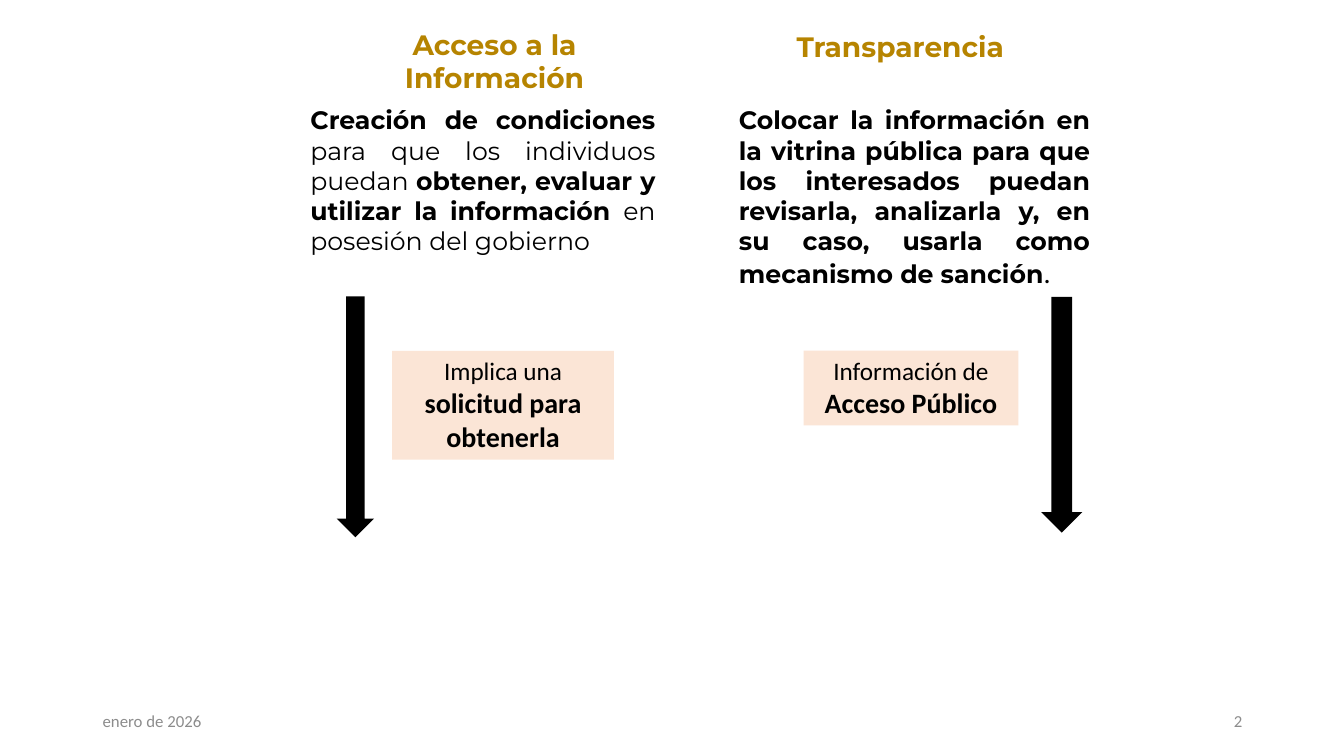
import pptx
import pptx.util
import pptx.dml.color
import pptx.enum.shapes
import pptx.enum.text

COLORS = {"gold": "B68400", "black": "000000", "peach": "FBE5D6", "gray": "8C8C8C"}
ALIGN = pptx.enum.text.PP_ALIGN
ANCHOR = pptx.enum.text.MSO_ANCHOR
SHAPES = pptx.enum.shapes.MSO_SHAPE

STYLES = {
    "heading": ("Montserrat", 20, True, "gold"),
    "plain": ("Montserrat", 18, False, "black"),
    "strong": ("Montserrat", 18, True, "black"),
    "stop": ("Calibri", 20, False, "black"),
    "note": ("Calibri", 18, False, "black"),
    "key": ("Calibri", 20, True, "black"),
    "footer": ("Calibri", 12, False, "gray"),
}

TEXTS = [
    ((3.37, 0.22, 3.07, 0.77), ALIGN.CENTER, None, [("Acceso a la Información", "heading")]),
    ((2.98, 0.99, 3.62, 1.62), ALIGN.JUSTIFY, None, [
        ("Creación de condiciones ", "strong"),
        ("para que los individuos puedan ", "plain"),
        ("obtener, evaluar y utilizar la información ", "strong"),
        ("en posesión del gobierno", "plain"),
    ]),
    ((3.89, 3.48, 2.2, 1.08), ALIGN.CENTER, "peach", [
        ("Implica una ", "note"), ("solicitud para obtenerla", "key"),
    ]),
    ((7.76, 0.24, 2.34, 0.44), ALIGN.CENTER, None, [("Transparencia", "heading")]),
    ((7.23, 0.99, 3.68, 1.95), ALIGN.JUSTIFY, None, [
        ("Colocar la información en la vitrina pública para que los interesados puedan "
         "revisarla, analizarla y, en su caso, usarla como mecanismo de sanción", "strong"),
        (".", "stop"),
    ]),
    ((7.97, 3.48, 2.13, 0.74), ALIGN.CENTER, "peach", [
        ("Información de ", "note"), ("Acceso Público", "key"),
    ]),
]
FOOTERS = [
    ((0.92, 6.95, 3, 0.4), ALIGN.LEFT, None, [("enero de 2026", "footer")]),
    ((9.42, 6.95, 3, 0.4), ALIGN.RIGHT, None, [("2", "footer")]),
]
ARROWS = [(2.33, 3.95, 2.39, 0.37), (9.36, 3.91, 2.34, 0.41)]


def inches(place):
    return [pptx.util.Inches(length) for length in place]


def color(name):
    return pptx.dml.color.RGBColor.from_string(COLORS[name])


def add_solid(page, kind, place, fill):
    shape = page.shapes.add_shape(kind, *inches(place))
    shape.shadow.inherit = False
    shape.fill.solid()
    shape.fill.fore_color.rgb = color(fill)
    shape.line.fill.background()
    return shape


def add_text(page, place, align, fill, spans, anchor):
    if fill:
        box = add_solid(page, SHAPES.RECTANGLE, place, fill)
    else:
        box = page.shapes.add_textbox(*inches(place))
    frame = box.text_frame
    frame.word_wrap = True
    frame.vertical_anchor = anchor
    para = frame.paragraphs[0]
    para.alignment = align
    for words, style in spans:
        span = para.add_run()
        span.text = words
        face, size, bold, ink = STYLES[style]
        span.font.name = face
        span.font.size = pptx.util.Pt(size)
        span.font.bold = bold
        span.font.color.rgb = color(ink)


def main():
    """Build the slide on access to information and transparency."""
    deck = pptx.Presentation()
    deck.slide_width, deck.slide_height = inches((13.33, 7.5))
    page = deck.slides.add_slide(deck.slide_layouts[6])
    for footer in FOOTERS:
        add_text(page, *footer, ANCHOR.MIDDLE)
    for text in TEXTS:
        add_text(page, *text, ANCHOR.TOP)
    for place in ARROWS:
        arrow = add_solid(page, SHAPES.RIGHT_ARROW, place, "black")
        arrow.rotation = 90
    deck.save("out.pptx")


if __name__ == "__main__":
    main()
